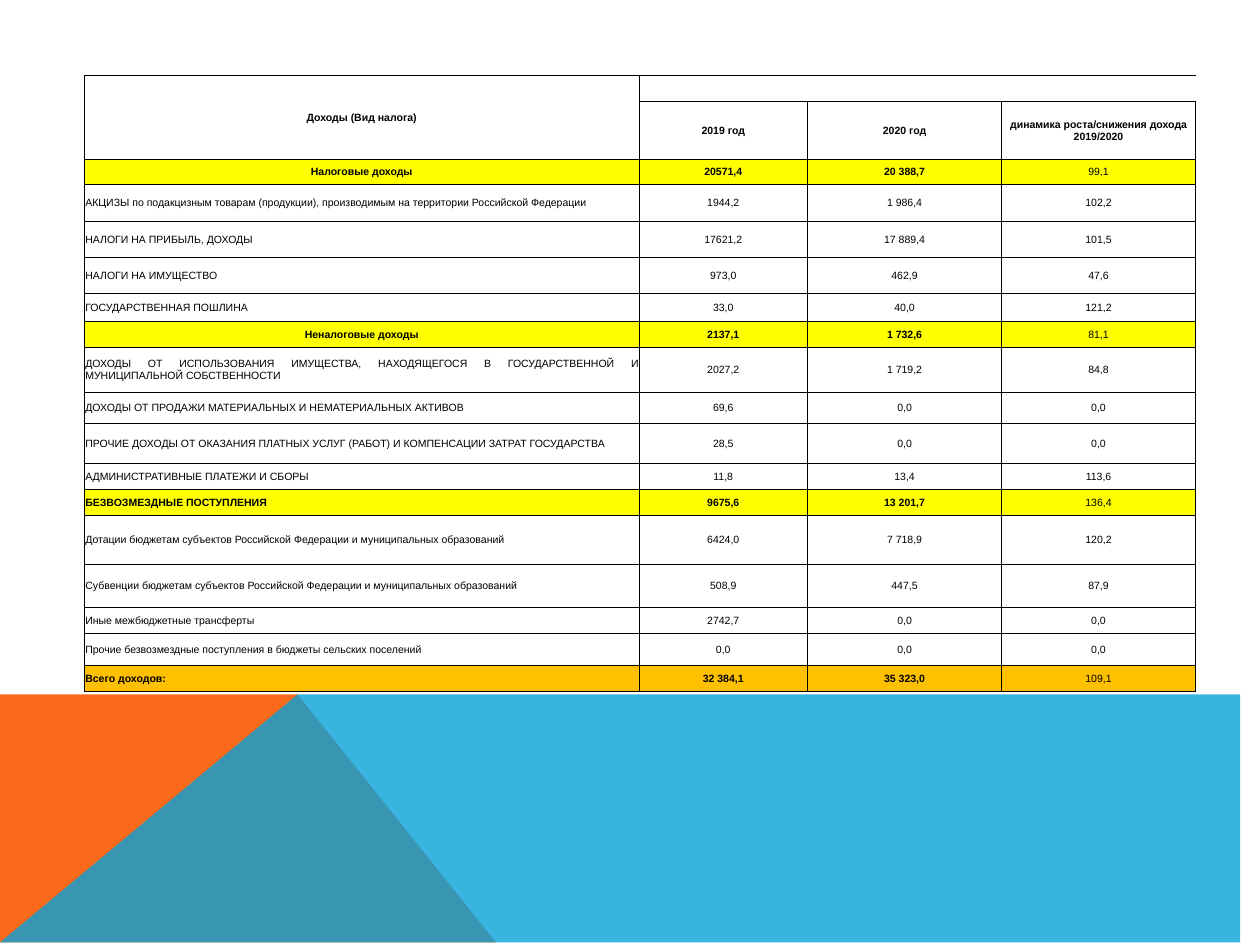
from dataclasses import dataclass

from lxml import etree
from pptx import Presentation
from pptx.dml.color import RGBColor
from pptx.enum.text import MSO_ANCHOR, PP_ALIGN
from pptx.oxml.ns import qn
from pptx.util import Cm, Pt

MID = MSO_ANCHOR.MIDDLE
CENTER = PP_ALIGN.CENTER
JUST = PP_ALIGN.JUSTIFY


@dataclass(frozen=True)
class Theme:
    """Colours and type sizes of the slide."""
    ink: str = "000000"
    group: str = "FFFF00"
    total: str = "FFC000"
    left: str = "F96A1B"
    band: str = "08A1D9"
    alpha: int = 80
    font: str = "Arial"
    size: float = 6
    line: float = 0.5


THEME = Theme()
WIDE, HIGH = 25.4, 19.05
TOP, PEAK, FOOT = 14.02, 5.67, 9.92
COLS = (11.18, 3.4, 3.91, 3.91)
HEADS = ("Доходы (Вид налога)", "2019 год", "2020 год",
         "динамика роста/снижения дохода 2019/2020")
HEAD_ROWS = (0.52, 1.17)
GROUP = {"fill": THEME.group, "bold": True, "align": CENTER}
GIFTS = {"fill": THEME.group, "bold": True, "align": JUST}
TOTAL = {"fill": THEME.total, "bold": True, "align": JUST}
ITEM = {"fill": None, "bold": False, "align": JUST}
ROWS = (
    (0.51, GROUP, "Налоговые доходы", "20571,4", "20 388,7", "99,1"),
    (0.74, ITEM, "АКЦИЗЫ по подакцизным товарам (продукции), производимым "
     "на территории Российской Федерации", "1944,2", "1 986,4", "102,2"),
    (0.73, ITEM, "НАЛОГИ НА ПРИБЫЛЬ, ДОХОДЫ", "17621,2", "17 889,4", "101,5"),
    (0.73, ITEM, "НАЛОГИ НА ИМУЩЕСТВО", "973,0", "462,9", "47,6"),
    (0.56, ITEM, "ГОСУДАРСТВЕННАЯ ПОШЛИНА", "33,0", "40,0", "121,2"),
    (0.52, GROUP, "Неналоговые доходы", "2137,1", "1 732,6", "81,1"),
    (0.91, ITEM, "ДОХОДЫ ОТ ИСПОЛЬЗОВАНИЯ ИМУЩЕСТВА, НАХОДЯЩЕГОСЯ В "
     "ГОСУДАРСТВЕННОЙ И МУНИЦИПАЛЬНОЙ СОБСТВЕННОСТИ",
     "2027,2", "1 719,2", "84,8"),
    (0.62, ITEM, "ДОХОДЫ ОТ ПРОДАЖИ МАТЕРИАЛЬНЫХ И НЕМАТЕРИАЛЬНЫХ АКТИВОВ",
     "69,6", "0,0", "0,0"),
    (0.81, ITEM, "ПРОЧИЕ ДОХОДЫ ОТ ОКАЗАНИЯ ПЛАТНЫХ УСЛУГ (РАБОТ) И "
     "КОМПЕНСАЦИИ ЗАТРАТ ГОСУДАРСТВА", "28,5", "0,0", "0,0"),
    (0.52, ITEM, "АДМИНИСТРАТИВНЫЕ ПЛАТЕЖИ И СБОРЫ", "11,8", "13,4", "113,6"),
    (0.52, GIFTS, "БЕЗВОЗМЕЗДНЫЕ ПОСТУПЛЕНИЯ", "9675,6", "13 201,7", "136,4"),
    (0.99, ITEM, "Дотации бюджетам субъектов Российской Федерации и "
     "муниципальных образований", "6424,0", "7 718,9", "120,2"),
    (0.87, ITEM, "Субвенции бюджетам субъектов Российской Федерации и "
     "муниципальных образований", "508,9", "447,5", "87,9"),
    (0.52, ITEM, "Иные межбюджетные трансферты", "2742,7", "0,0", "0,0"),
    (0.65, ITEM, "Прочие безвозмездные поступления в бюджеты сельских "
     "поселений", "0,0", "0,0", "0,0"),
    (0.52, TOTAL, "Всего доходов:", "32 384,1", "35 323,0", "109,1"),
)


def assign(item, values):
    """Set each attribute named in the dict."""
    for name, value in values.items():
        setattr(item, name, value)


def add_poly(slide, points, color, alpha=None):
    """Draw a filled polygon from points in centimetres."""
    pen = slide.shapes.build_freeform(*points[0], scale=Cm(1))
    pen.add_line_segments(points[1:], close=True)
    shape = pen.convert_to_shape()
    shape.shadow.inherit = False
    shape.line.fill.background()
    shape.fill.solid()
    shape.fill.fore_color.rgb = RGBColor.from_string(color)
    if alpha:
        tint = shape.fill._xPr.find(".//" + qn("a:srgbClr"))
        etree.SubElement(tint, qn("a:alpha"), val=str(alpha * 1000))


def set_edges(cell, shown):
    """Rule the named sides of a cell and clear the others."""
    props = cell._tc.get_or_add_tcPr()
    for side in "LRTB":
        edge = etree.SubElement(props, qn("a:ln" + side), w=str(Pt(THEME.line)))
        if side in shown:
            paint = etree.SubElement(edge, qn("a:solidFill"))
            etree.SubElement(paint, qn("a:srgbClr"), val=THEME.ink)
        else:
            etree.SubElement(edge, qn("a:noFill"))


def set_cell(cell, text="", fill=None, bold=False, align=CENTER, edges="LRTB"):
    """Fill one cell with text, colour and rules."""
    assign(cell, {"margin_left": Cm(0.02), "margin_right": Cm(0.02),
                  "margin_top": Cm(0.02), "margin_bottom": 0,
                  "vertical_anchor": MID})
    set_edges(cell, edges)
    if fill:
        cell.fill.solid()
        cell.fill.fore_color.rgb = RGBColor.from_string(fill)
    else:
        cell.fill.background()
    para = cell.text_frame.paragraphs[0]
    para.alignment = align
    if text:
        run = para.add_run()
        run.text = text
        assign(run.font, {"name": THEME.font, "size": Pt(THEME.size),
                          "bold": bold})
        run.font.color.rgb = RGBColor.from_string(THEME.ink)
    else:
        etree.SubElement(para._p, qn("a:endParaRPr"),
                         sz=str(int(THEME.size * 100)))


def add_grid(slide):
    """Build the income table."""
    sizes = HEAD_ROWS + tuple(row[0] for row in ROWS)
    table = slide.shapes.add_table(
        len(sizes), len(COLS), Cm(1.7), Cm(1.52),
        Cm(sum(COLS)), Cm(sum(sizes))).table
    assign(table, {"first_row": False, "horz_banding": False})
    for col, width in zip(table.columns, COLS):
        col.width = Cm(width)
    for row, height in zip(table.rows, sizes):
        row.height = Cm(height)
    for col, text in enumerate(HEADS):
        first = col == 0
        set_cell(table.cell(0, col), text if first else "", bold=True,
                 edges="LRTB" if first else "LTB" if col == 1 else "TB")
        set_cell(table.cell(1, col), "" if first else text, bold=True)
    table.cell(0, 0).merge(table.cell(1, 0))
    for row, (_, look, *texts) in enumerate(ROWS, len(HEAD_ROWS)):
        for col, text in enumerate(texts):
            set_cell(table.cell(row, col), text, look["fill"],
                     look["bold"] and col < len(COLS) - 1,
                     CENTER if col else look["align"])


def main():
    """Build and save the slide."""
    deck = Presentation()
    assign(deck, {"slide_width": Cm(WIDE), "slide_height": Cm(HIGH)})
    slide = deck.slides.add_slide(deck.slide_layouts[6])
    add_poly(slide, [(0, HIGH), (0, TOP), (PEAK, TOP), (FOOT, HIGH)],
             THEME.left)
    add_poly(slide, [(0, HIGH), (PEAK, TOP), (WIDE, TOP), (WIDE, HIGH)],
             THEME.band, THEME.alpha)
    add_grid(slide)
    deck.save("out.pptx")


if __name__ == "__main__":
    main()
